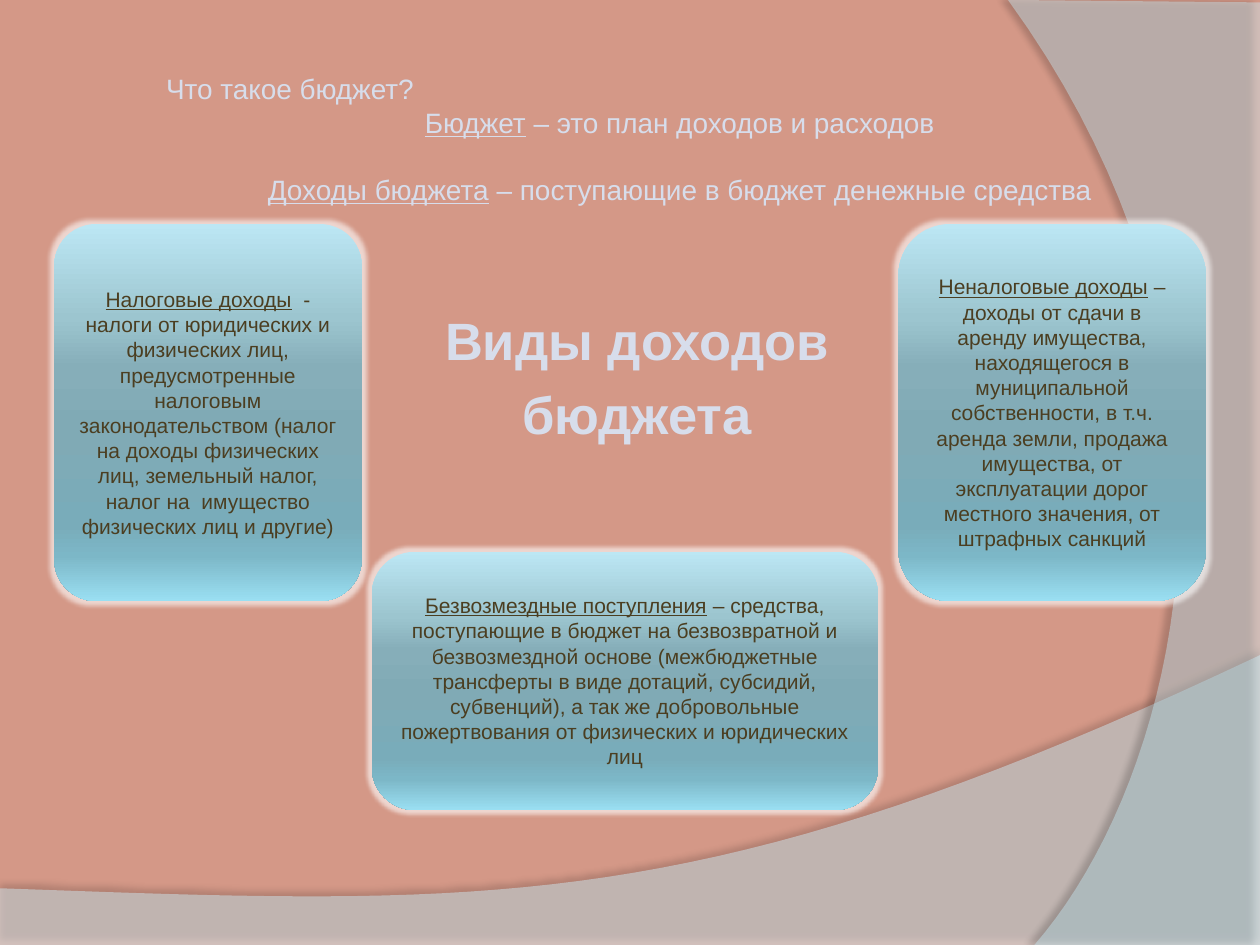
from dataclasses import dataclass

from lxml import etree
from pptx import Presentation
from pptx.dml.color import RGBColor
from pptx.enum.shapes import MSO_SHAPE
from pptx.enum.text import MSO_ANCHOR, MSO_AUTO_SIZE, PP_ALIGN
from pptx.oxml.ns import qn
from pptx.util import Pt

ROUND = MSO_SHAPE.ROUNDED_RECTANGLE
MIDDLE, TOP = MSO_ANCHOR.MIDDLE, MSO_ANCHOR.TOP
LEFT, CENTER = PP_ALIGN.LEFT, PP_ALIGN.CENTER
FIXED = MSO_AUTO_SIZE.NONE

COLORS = {
    "ground": "D49887",
    "wave": "D3F4FE",
    "arc": "CBF4FF",
    "light": "D7DDEB",
    "dark": "4B3E21",
    "glow": "FFFFFF",
    "shade": "000000",
}
STOPS = [(0, "BCE7F4"), (25, "9CC5CF"), (38, "86AEB9"), (55, "80AAB5"),
         (80, "79ACBA"), (88, "7CB7C7"), (100, "9ADFF2")]
STEPS = 40

Point = tuple[float, float]


@dataclass
class Card:
    left: float
    top: float
    width: float
    height: float
    term: str
    text: str
    round: float = 0.167


@dataclass
class Swoosh:
    points: list[Point]
    color: str
    alpha: int
    shade: int
    dist: float
    angle: int


def tint(parent, color: str, alpha: int = 100) -> None:
    node = etree.SubElement(parent, qn("a:srgbClr"), val=color)
    if alpha < 100:
        etree.SubElement(node, qn("a:alpha"), val=str(alpha * 1000))


def effect(shape, tag: str, color: str, alpha: int, **attrs) -> None:
    shape.shadow.inherit = False
    box = shape._element.spPr.find(qn("a:effectLst"))
    node = etree.SubElement(box, qn(tag), {k: str(v) for k, v in attrs.items()})
    tint(node, color, alpha)


def write(par, text: str, *, term: str = "", size: float = 12,
          color: str = "dark", bold: bool = False, align=CENTER,
          before: float = 0) -> None:
    par.alignment = align
    par.line_spacing = Pt(size * 1.2)
    par.space_before = Pt(before)
    for part, under in ((term, True), (text, False)):
        if part:
            run = par.add_run()
            run.text = part
            font = run.font
            font.name, font.size = "Arial", Pt(size)
            font.bold, font.underline = bold, under
            font.color.rgb = RGBColor.from_string(COLORS[color])


def curve(a: Point, b: Point, c: Point, d: Point) -> list[Point]:
    def blend(t: float, i: int) -> float:
        u = 1 - t
        return (u**3 * a[i] + 3 * u * u * t * b[i]
                + 3 * u * t * t * c[i] + t**3 * d[i])
    return [(blend(n / STEPS, 0), blend(n / STEPS, 1)) for n in range(STEPS + 1)]


def sweep(slide, item: Swoosh) -> None:
    dots = [(Pt(x), Pt(y)) for x, y in item.points]
    path = slide.shapes.build_freeform(*dots[0], scale=1.0)
    path.add_line_segments(dots[1:], close=True)
    shape = path.convert_to_shape()
    shape.fill.solid()
    shape.fill.fore_color.rgb = RGBColor.from_string(COLORS[item.color])
    fill = shape._element.spPr.find(qn("a:solidFill"))
    fill.remove(fill[0])
    tint(fill, COLORS[item.color], item.alpha)
    shape.line.fill.background()
    effect(shape, "a:outerShdw", COLORS["shade"], item.shade,
           blurRad=Pt(4), dist=Pt(item.dist), dir=item.angle * 60000)


def panel(slide, card: Card) -> None:
    shape = slide.shapes.add_shape(ROUND, Pt(card.left), Pt(card.top),
                                   Pt(card.width), Pt(card.height))
    shape.adjustments[0] = card.round
    shape.fill.gradient()
    shape.fill.gradient_angle = 270
    stops = shape._element.spPr.find(qn("a:gradFill")).find(qn("a:gsLst"))
    for old in list(stops):
        stops.remove(old)
    for pos, color in STOPS:
        tint(etree.SubElement(stops, qn("a:gs"), pos=str(pos * 1000)), color)
    shape.line.fill.background()
    effect(shape, "a:glow", COLORS["glow"], 60, rad=Pt(5))
    frame = shape.text_frame
    frame.word_wrap = True
    frame.vertical_anchor = MIDDLE
    write(frame.paragraphs[0], card.text, term=card.term)


SWEEPS = [
    Swoosh([(0, 540), (720, 540)]
           + curve((720, 374.4), (402.5, 524.9), (281.5, 517.7), (0, 507.6)),
           "wave", 45, 35, 3.5, 270),
    Swoosh([(720, 1.4), (720, 540)]
           + curve((591.1, 540), (673.2, 445.7), (733, 216), (576, 0)),
           "arc", 40, 45, 4, 180),
]

CARDS = [
    Card(513.4, 128, 175.7, 215.5, "Неналоговые доходы",
         " – доходы от сдачи в аренду имущества, находящегося в муниципальной "
         "собственности, в т.ч. аренда земли, продажа имущества, от "
         "эксплуатации дорог местного значения, от штрафных санкций"),
    Card(31, 128, 175.7, 215.5, "Налоговые доходы",
         "  - налоги от юридических и физических лиц, предусмотренные "
         "налоговым законодательством (налог на доходы физических лиц, "
         "земельный налог, налог на  имущество физических лиц и другие)", 0.136),
    Card(212.4, 315.3, 289.4, 147.6, "Безвозмездные поступления",
         " – средства, поступающие в бюджет на безвозвратной и безвозмездной "
         "основе (межбюджетные трансферты в виде дотаций, субсидий, "
         "субвенций), а так же добровольные пожертвования от физических и "
         "юридических лиц"),
]

LINES = [
    ("", "Что такое бюджет?", LEFT, 0),
    ("Бюджет", " – это план доходов и расходов", CENTER, 0),
    ("Доходы бюджета", " – поступающие в бюджет денежные средства", CENTER, 19.2),
]


def main() -> None:
    deck = Presentation()
    deck.slide_width, deck.slide_height = Pt(720), Pt(540)
    slide = deck.slides.add_slide(deck.slide_layouts[5])
    ground = slide.background.fill
    ground.solid()
    ground.fore_color.rgb = RGBColor.from_string(COLORS["ground"])

    for item in SWEEPS:
        sweep(slide, item)

    title = slide.shapes.title
    title.left, title.top = Pt(26), Pt(128)
    title.width, title.height = Pt(676), Pt(174)
    frame = title.text_frame
    frame.auto_size = FIXED
    frame.vertical_anchor = MIDDLE
    write(frame.paragraphs[0], "Виды доходов", size=30, color="light", bold=True)
    write(frame.add_paragraph(), "бюджета", size=30, color="light", bold=True,
          before=6)

    intro = slide.shapes.add_textbox(Pt(87.8), Pt(37.4), Pt(601.2), Pt(85))
    frame = intro.text_frame
    frame.word_wrap = True
    frame.vertical_anchor = TOP
    for n, (term, text, align, gap) in enumerate(LINES):
        par = frame.add_paragraph() if n else frame.paragraphs[0]
        write(par, text, term=term, size=16, color="light", align=align,
              before=gap)

    for card in CARDS:
        panel(slide, card)
    deck.save("out.pptx")


if __name__ == "__main__":
    main()
